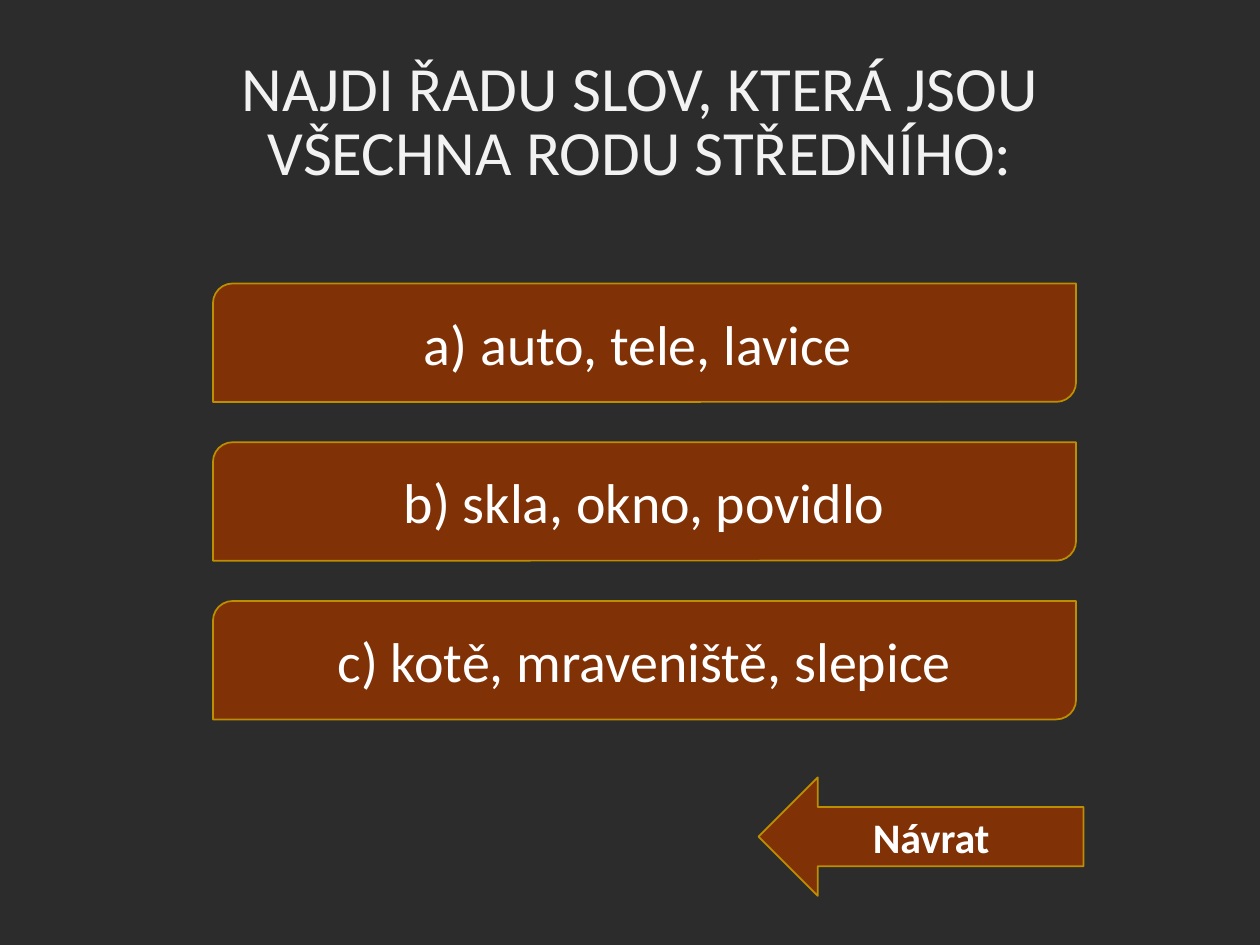
from pptx import Presentation
from pptx.dml.color import RGBColor
from pptx.enum import shapes, text
from pptx.util import Inches, Pt

BACKGROUND = RGBColor(0x2C, 0x2C, 0x2C)
BROWN = RGBColor(0x80, 0x31, 0x06)
GOLD = RGBColor(0xBD, 0x8E, 0x00)
LIGHT = RGBColor(0xF2, 0xF2, 0xF2)
WHITE = RGBColor(0xFF, 0xFF, 0xFF)

TITLE = "NAJDI ŘADU SLOV, KTERÁ JSOU VŠECHNA RODU STŘEDNÍHO:"
ANSWERS = [
    "a) auto, tele, lavice ",
    "b) skla, okno, povidlo",
    "c) kotě, mraveniště, slepice",
]
RETURN_LABEL = "Návrat "

ANSWER_LEFT, ANSWER_TOP, ANSWER_WIDTH = 1.69, 2.25, 6.85
ANSWER_STEP = 1.26
BUTTON_HEIGHT = 0.94


def write_text(shape, content, size, color=WHITE, bold=False, line_spacing=None):
    frame = shape.text_frame
    frame.word_wrap = True
    frame.vertical_anchor = text.MSO_ANCHOR.MIDDLE
    paragraph = frame.paragraphs[0]
    paragraph.alignment = text.PP_ALIGN.CENTER
    paragraph.line_spacing = line_spacing
    run = paragraph.add_run()
    run.text = content
    run.font.name = "Calibri"
    run.font.size = Pt(size)
    run.font.bold = bold
    run.font.color.rgb = color


def add_button(slide, kind, left, top, width, content, **text_format):
    shape = slide.shapes.add_shape(
        kind, Inches(left), Inches(top), Inches(width), Inches(BUTTON_HEIGHT))
    shape.shadow.inherit = False
    shape.fill.solid()
    shape.fill.fore_color.rgb = BROWN
    shape.line.color.rgb = GOLD
    shape.line.width = Pt(1)
    write_text(shape, content, **text_format)


def main():
    presentation = Presentation()
    presentation.slide_width = Inches(10)
    presentation.slide_height = Inches(7.5)
    slide = presentation.slides.add_slide(presentation.slide_layouts[6])
    slide.background.fill.solid()
    slide.background.fill.fore_color.rgb = BACKGROUND

    title = slide.shapes.add_textbox(
        Inches(0.98), Inches(0.36), Inches(8.2), Inches(1.25))
    write_text(title, TITLE, size=36, color=LIGHT, line_spacing=0.85)

    for index, answer in enumerate(ANSWERS):
        add_button(slide, shapes.MSO_SHAPE.ROUND_2_DIAG_RECTANGLE, ANSWER_LEFT,
                   ANSWER_TOP + index * ANSWER_STEP, ANSWER_WIDTH, answer, size=32)

    add_button(slide, shapes.MSO_SHAPE.LEFT_ARROW, 6.02, 6.17, 2.58,
               RETURN_LABEL, size=24, bold=True)

    presentation.save("out.pptx")


if __name__ == "__main__":
    main()
